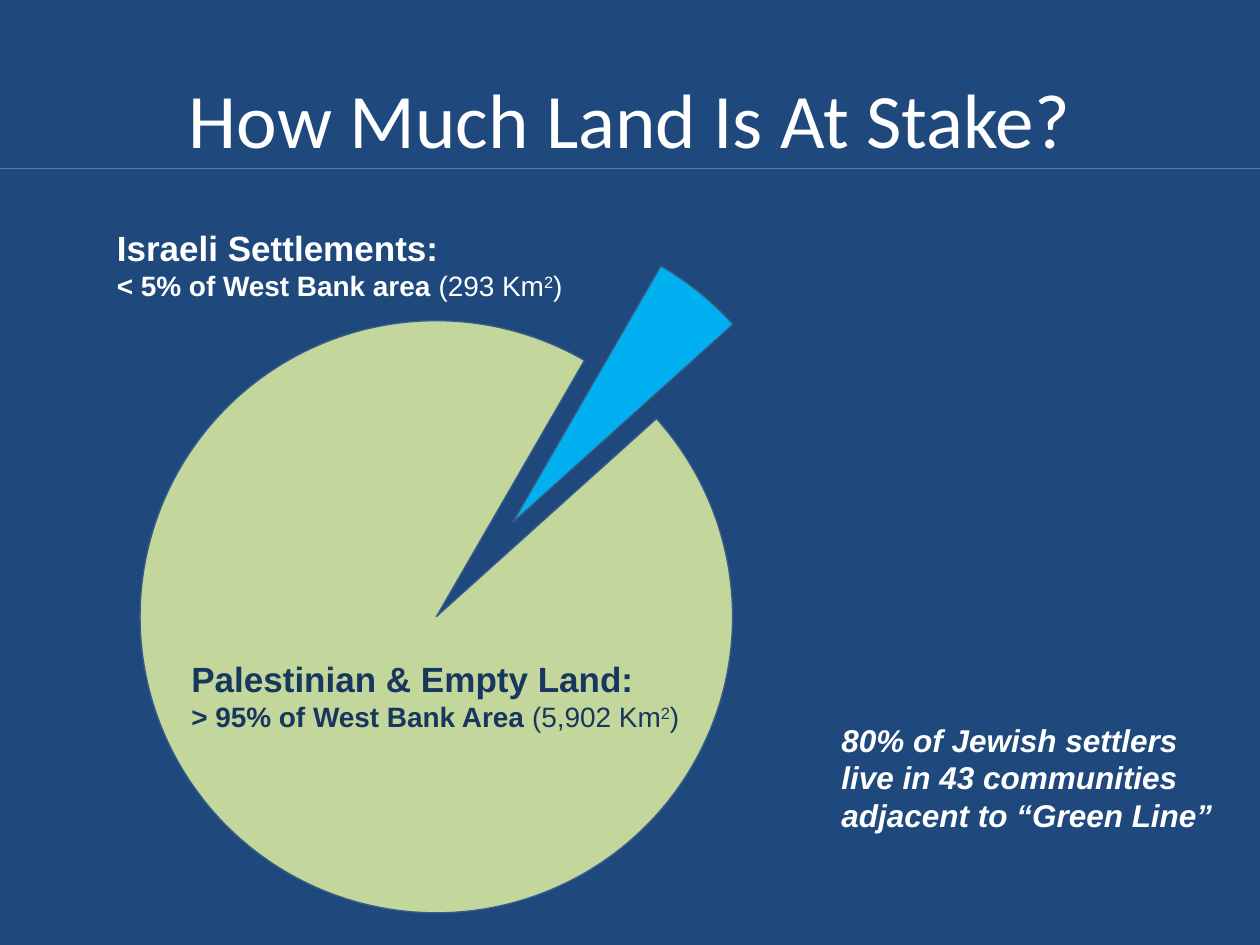
import pptx
import pptx.chart.data
import pptx.dml.color
import pptx.enum.chart
import pptx.enum.text
import pptx.oxml
import pptx.oxml.ns
import pptx.util

SLIDE_WIDTH, SLIDE_HEIGHT = 10, 7.5
BACKGROUND, WHITE, NAVY = "1F497D", "FFFFFF", "17375E"
BORDER, SLICE_LINE = "4B7EBC", "385D8A"
SLICE_COLORS = ("00B0F0", "C3D69B")
PLOT_SHARES = {"x": 0.126, "y": 0, "w": 0.548, "h": 0.889}
SERIES_EXPLOSION, SETTLEMENT_EXPLOSION = 29, 12
PARAGRAPH_ALIGN = pptx.enum.text.PP_ALIGN
ANCHOR = pptx.enum.text.MSO_ANCHOR


def color(hex_string):
    return pptx.dml.color.RGBColor.from_string(hex_string)


def share_box(left, top, width, height):
    """Turn shares of the slide's size into lengths."""
    shares = (left, top, width, height)
    sizes = (SLIDE_WIDTH, SLIDE_HEIGHT) * 2
    return [pptx.util.Inches(share * size) for share, size in zip(shares, sizes)]


def chart_xml(markup):
    return pptx.oxml.parse_xml(
        markup.replace(">", f" {pptx.oxml.ns.nsdecls('c', 'a')}>", 1))


def format_run(run, size, fill, font="Arial", bold=False, italic=False, superscript=False):
    run.font.size = pptx.util.Pt(size)
    run.font.name = font
    run.font.bold = bold
    run.font.italic = italic
    run.font.color.rgb = color(fill)
    if superscript:
        run.font._element.set("baseline", "30000")


def add_text(slide, box, paragraphs, align=PARAGRAPH_ALIGN.LEFT, anchor=ANCHOR.TOP,
             wrap=True, **run_format):
    """Each paragraph is a list of (text, format changes); a newline is a line break."""
    frame = slide.shapes.add_textbox(*share_box(*box)).text_frame
    frame.word_wrap = wrap
    frame.vertical_anchor = anchor
    for index, runs in enumerate(paragraphs):
        paragraph = frame.add_paragraph() if index else frame.paragraphs[0]
        paragraph.alignment = align
        for text, changes in runs:
            for line_number, line in enumerate(text.split("\n")):
                if line_number:
                    paragraph.add_line_break()
                run = paragraph.add_run()
                run.text = line
                format_run(run, **{**run_format, **changes})


def add_land_label(slide, box, heading, share, area, fill):
    light = {"size": 16, "bold": False}
    add_text(slide, box, [
        [(heading, {"size": 20})],
        [(share + " ", {"size": 16}), (f"({area} Km", light),
         ("2", {**light, "superscript": True}), (")", light)],
    ], fill=fill, bold=True)


def frame_chart(chart):
    """Place the plot by shares of the chart and outline the chart area."""
    sides = "".join(f'<c:{side} val="{share}"/>' for side, share in PLOT_SHARES.items())
    plot_area = chart._chartSpace.chart.plotArea
    for layout in plot_area.findall(pptx.oxml.ns.qn("c:layout")):
        plot_area.remove(layout)
    plot_area.insert(0, chart_xml(
        '<c:layout><c:manualLayout><c:layoutTarget val="inner"/>'
        '<c:xMode val="edge"/><c:yMode val="edge"/>'
        f"{sides}</c:manualLayout></c:layout>"))
    chart._chartSpace.chart.addnext(chart_xml(
        f'<c:spPr><a:noFill/><a:ln w="{pptx.util.Pt(0.75)}"><a:solidFill>'
        f'<a:srgbClr val="{BORDER}"/></a:solidFill></a:ln></c:spPr>'))


def add_land_pie(slide, box):
    data = pptx.chart.data.CategoryChartData()
    data.categories = ["1", "2"]
    data.add_series("Series 1", (5, 95))
    chart = slide.shapes.add_chart(
        pptx.enum.chart.XL_CHART_TYPE.PIE, *share_box(*box), data).chart
    chart.has_legend = False
    chart.has_title = False
    chart.font.size = pptx.util.Pt(10)
    chart.font.name = "Calibri"
    chart.font.color.rgb = color("000000")
    plot = chart.plots[0]
    plot.vary_by_categories = True
    plot._element.append(chart_xml('<c:firstSliceAng val="30"></c:firstSliceAng>'))
    series = plot.series[0]
    for index, fill in enumerate(SLICE_COLORS):
        slice_format = series.points[index].format
        slice_format.fill.solid()
        slice_format.fill.fore_color.rgb = color(fill)
        slice_format.line.color.rgb = color(SLICE_LINE)
        slice_format.line.width = pptx.util.Pt(0.75)
    points = series._element.findall(pptx.oxml.ns.qn("c:dPt"))
    for point, explosion in zip(points, (SETTLEMENT_EXPLOSION, SERIES_EXPLOSION)):
        point.find(pptx.oxml.ns.qn("c:spPr")).addprevious(
            chart_xml(f'<c:explosion val="{explosion}"></c:explosion>'))
    points[0].addprevious(
        chart_xml(f'<c:explosion val="{SERIES_EXPLOSION}"></c:explosion>'))
    frame_chart(chart)


def main():
    presentation = pptx.Presentation()
    presentation.slide_width = pptx.util.Inches(SLIDE_WIDTH)
    presentation.slide_height = pptx.util.Inches(SLIDE_HEIGHT)
    slide = presentation.slides.add_slide(presentation.slide_layouts[6])
    slide.background.fill.solid()
    slide.background.fill.fore_color.rgb = color(BACKGROUND)

    add_text(slide, (0.05, 0.04, 0.9, 0.17), [[("How Much Land Is At Stake?", {})]],
             align=PARAGRAPH_ALIGN.CENTER, anchor=ANCHOR.MIDDLE,
             size=44, font="Calibri", fill=WHITE)
    add_land_pie(slide, (-0.054, 1.33 / SLIDE_HEIGHT, 1.108, 6.83 / SLIDE_HEIGHT))
    add_land_label(slide, (0.142, 5.17 / SLIDE_HEIGHT, 0.425, 0.71 / SLIDE_HEIGHT),
                   "Palestinian & Empty Land:", "> 95% of West Bank Area", "5,902", NAVY)
    add_land_label(slide, (0.083, 1.75 / SLIDE_HEIGHT, 0.433, 0.71 / SLIDE_HEIGHT),
                   "Israeli Settlements:", "< 5% of West Bank area", "293", WHITE)
    add_text(slide, (0.658, 5.67 / SLIDE_HEIGHT, 0.318, 1.31 / SLIDE_HEIGHT),
             [[("80% of Jewish settlers\nlive in 43 communities\n"
                "adjacent to “Green Line”", {})]],
             wrap=False, size=18, fill=WHITE, bold=True, italic=True)
    presentation.save("out.pptx")


if __name__ == "__main__":
    main()
